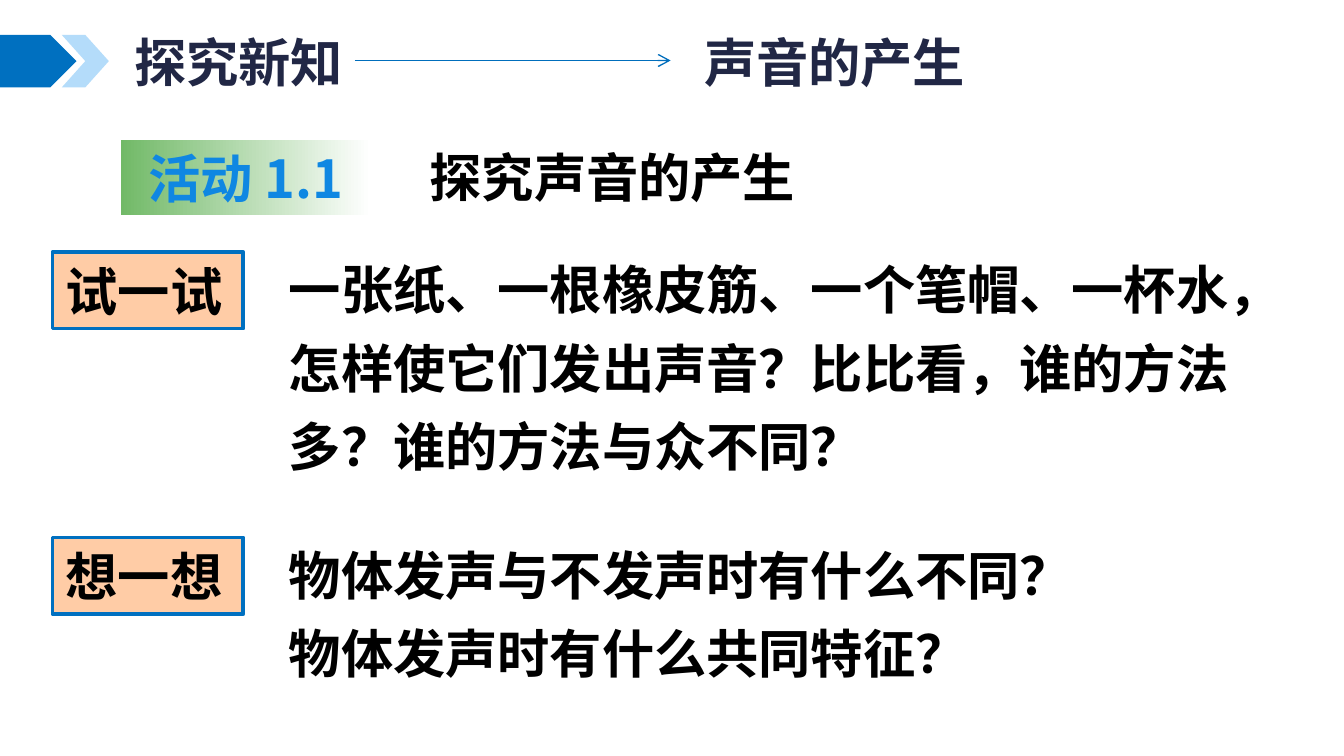
import pptx
import pptx.util
import pptx.dml.color
import pptx.enum.shapes
import pptx.enum.text
import pptx.oxml.ns
from lxml import etree

SHAPE = pptx.enum.shapes.MSO_SHAPE
ALIGN = pptx.enum.text.PP_ALIGN
MID = pptx.enum.text.MSO_ANCHOR.MIDDLE
TOP = pptx.enum.text.MSO_ANCHOR.TOP
qn = pptx.oxml.ns.qn
rgb = pptx.dml.color.RGBColor.from_string
NOTO = "Noto Sans CJK SC"

# A 16:9 slide; grid of 100 columns across, rows of the same size down
deck = pptx.Presentation()
deck.slide_width = pptx.util.Inches(10)
deck.slide_height = deck.slide_width * 9 // 16
unit = deck.slide_width / 100
slide = deck.slides.add_slide(deck.slide_layouts[5])
shapes = slide.shapes


def grid(*cells):
    return [round(cell * unit) for cell in cells]


def write(shape, lines, color="000000", font=NOTO, align=ALIGN.LEFT,
          anchor=MID, space=None):
    frame = shape.text_frame
    frame.word_wrap = True
    frame.vertical_anchor = anchor
    frame.text = "\n".join(lines)
    for par in frame.paragraphs:
        par.alignment = align
        par.line_spacing = space
        par.font.name = font
        par.font.size = pptx.util.Pt(28)
        par.font.bold = True
        par.font.color.rgb = rgb(color)
        # East Asian typeface, and no punctuation outside the box
        props = par._p.pPr
        props.set("hangingPunct", "0")
        etree.SubElement(props.find(qn("a:defRPr")), qn("a:ea"), typeface=NOTO)


# Header marks
for kind, left, width, color in [(SHAPE.PENTAGON, 0, 5.7, "0070C0"),
                                 (SHAPE.CHEVRON, 4.6, 3.5, "B4DCFA")]:
    mark = shapes.add_shape(kind, *grid(left, 2.6, width, 3.9))
    mark.shadow.inherit = False
    mark.fill.solid()
    mark.fill.fore_color.rgb = rgb(color)
    mark.line.fill.background()

# Title and topic
title = shapes.title
title.left, title.top, title.width, title.height = grid(9, 1.7, 64.2, 5.8)
write(title, ["探究新知"], "212745")
topic = shapes.add_textbox(*grid(51.4, 1.7, 22.7, 5.8))
write(topic, ["声音的产生"], "212745")

# Arrow from title to topic
arrow = shapes.add_connector(pptx.enum.shapes.MSO_CONNECTOR.STRAIGHT,
                             *grid(26.4, 4.5, 49.9, 4.5))
arrow.line.color.rgb = rgb("006EBC")
arrow.line.width = pptx.util.Pt(0.75)
etree.SubElement(arrow.line._get_or_add_ln(), qn("a:tailEnd"), type="arrow")
etree.SubElement(arrow._element.spPr, qn("a:effectLst"))

# Activity badge and name
badge = shapes.add_shape(SHAPE.RECTANGLE, *grid(9, 10.4, 18.6, 5.6))
badge.shadow.inherit = False
badge.line.fill.background()
badge.fill.gradient()
badge.fill.gradient_angle = 0
for stop, place, color in zip(badge.fill.gradient_stops, (0, 1),
                              ("71B967", "FFFFFF")):
    stop.position = place
    stop.color.rgb = rgb(color)
write(badge, ["活动 1.1"], "0F87E2", align=ALIGN.CENTER)
name = shapes.add_textbox(*grid(31, 10.3, 63, 5.7))
write(name, ["探究声音的产生"])

# Tasks: a label on the left, its questions on the right
tasks = [
    ("试一试", 18.75, 77.5, 18.8,
     ["一张纸、一根橡皮筋、一个笔帽、一杯水，怎样使它们发出声音？"
      "比比看，谁的方法多？谁的方法与众不同？"]),
    ("想一想", 40, 61.8, 13,
     ["物体发声与不发声时有什么不同？", "物体发声时有什么共同特征？"]),
]
for label, top, width, height, lines in tasks:
    body = shapes.add_textbox(*grid(20.3, top - 1.35, width, height))
    frame = body.text_frame
    frame.margin_left, frame.margin_right = grid(1.2, 1.2)
    frame.margin_top, frame.margin_bottom = grid(0.6, 0.6)
    write(body, lines, font="Arial", anchor=TOP, space=1.25)

    tag = shapes.add_shape(SHAPE.RECTANGLE, *grid(3.9, top, 14.2, 5.7))
    tag.shadow.inherit = False
    tag.fill.solid()
    tag.fill.fore_color.rgb = rgb("FFCCA6")
    tag.line.color.rgb = rgb("0070C0")
    tag.line.width = pptx.util.Pt(2)
    write(tag, [label])

deck.save("out.pptx")
